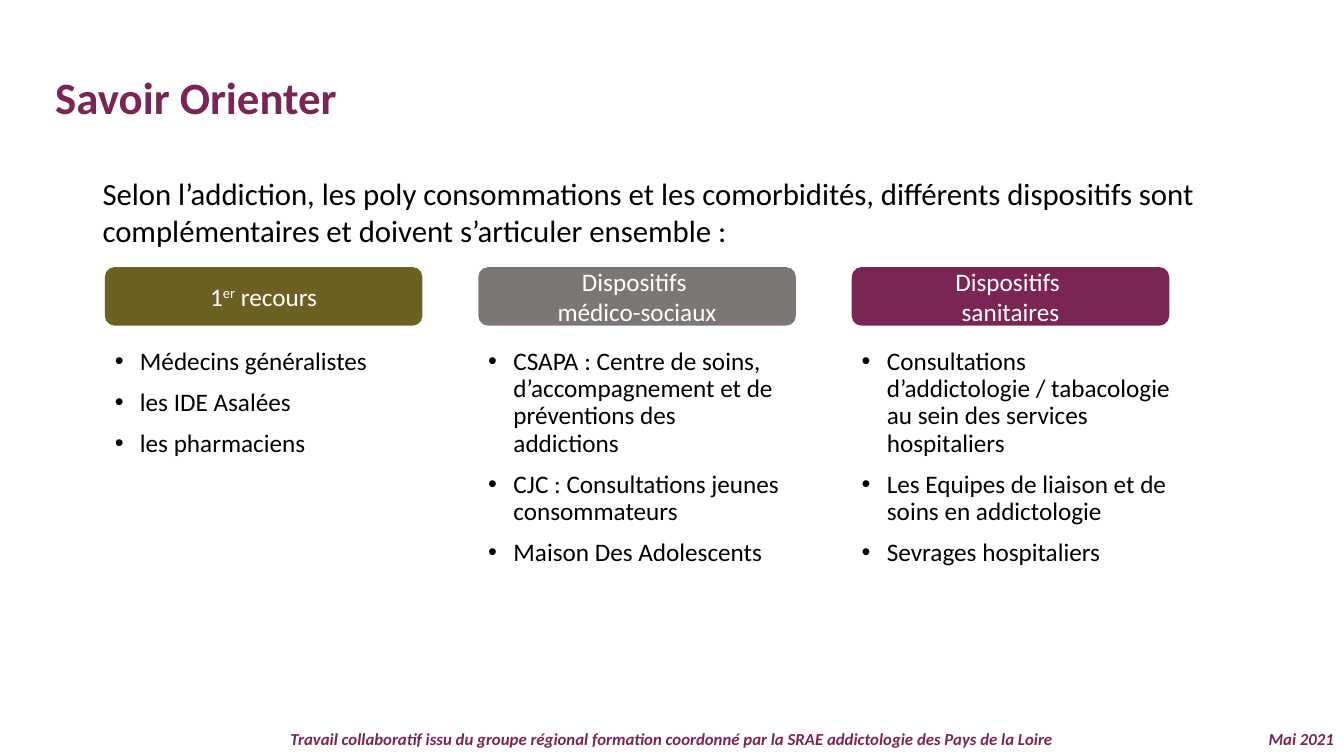
from lxml import etree
from pptx import Presentation
from pptx.dml.color import RGBColor
from pptx.enum import shapes, text
from pptx.oxml import ns
from pptx.util import Pt

PLUM = RGBColor(0x7A, 0x25, 0x53)
OLIVE = RGBColor(0x6B, 0x61, 0x23)
GREY = RGBColor(0x7C, 0x77, 0x75)
BLACK = RGBColor(0, 0, 0)
WHITE = RGBColor(255, 255, 255)

FONT = "Calibri"
COLUMN_LEFT, COLUMN_PITCH = 74.9, 266.75
HEADER_TOP, HEADER_WIDTH, HEADER_HEIGHT = 190.8, 226.8, 41.8
LIST_TOP, BULLET_INDENT = 245.5, 18

# Header lines (each a list of run texts and superscript flags), colour,
# list width, list height, list items
COLUMNS = [
    ([[("1", False), ("er", True), (" recours", False)]], OLIVE, 224.6, 125.3,
     ["Médecins généralistes", "les IDE Asalées", "les pharmaciens"]),
    ([[("Dispositifs ", False)], [("médico-sociaux", False)]], GREY, 224.6, 205.9,
     ["CSAPA : Centre de soins, d’accompagnement et de préventions des addictions",
      "CJC : Consultations jeunes consommateurs",
      "Maison Des Adolescents"]),
    ([[("Dispositifs ", False)], [("sanitaires", False)]], PLUM, 243.4, 174.2,
     ["Consultations d’addictologie / tabacologie au sein des services hospitaliers",
      "Les Equipes de liaison et de soins en addictologie",
      "Sevrages hospitaliers"]),
]


def add_run(paragraph, content, size, color, bold=False, italic=False):
    run = paragraph.add_run()
    run.text = content
    font = run.font
    font.name, font.size, font.bold, font.italic = FONT, Pt(size), bold, italic
    font.color.rgb = color
    return run


def add_text_frame(slide, left, top, width, height):
    box = slide.shapes.add_textbox(Pt(left), Pt(top), Pt(width), Pt(height))
    box.text_frame.word_wrap = True
    return box.text_frame


def add_line(slide, bounds, content, size, color, align=text.PP_ALIGN.LEFT,
             spacing=1.0, bold=False, italic=False):
    """Add a text box that holds one paragraph of uniform style."""
    paragraph = add_text_frame(slide, *bounds).paragraphs[0]
    paragraph.alignment = align
    paragraph.line_spacing = spacing
    add_run(paragraph, content, size, color, bold, italic)


def add_header(slide, left, lines, color):
    shape = slide.shapes.add_shape(
        shapes.MSO_SHAPE.ROUNDED_RECTANGLE,
        Pt(left), Pt(HEADER_TOP), Pt(HEADER_WIDTH), Pt(HEADER_HEIGHT))
    shape.shadow.inherit = False
    shape.fill.solid()
    shape.fill.fore_color.rgb = color
    shape.line.fill.background()
    frame = shape.text_frame
    frame.word_wrap = True
    frame.vertical_anchor = text.MSO_ANCHOR.MIDDLE
    paragraph = frame.paragraphs[0]
    paragraph.alignment = text.PP_ALIGN.CENTER
    for index, line in enumerate(lines):
        if index:
            paragraph.add_line_break()
        for content, superscript in line:
            run = add_run(paragraph, content, 18, WHITE)
            if superscript:
                run.font._element.set("baseline", "30000")


def set_bullet(paragraph):
    properties = paragraph._p.get_or_add_pPr()
    properties.set("marL", str(Pt(BULLET_INDENT)))
    properties.set("indent", str(-Pt(BULLET_INDENT)))
    etree.SubElement(properties, ns.qn("a:buFont"), typeface="Arial")
    etree.SubElement(properties, ns.qn("a:buChar"), char="•")


def add_bullet_list(slide, left, width, height, items):
    frame = add_text_frame(slide, left, LIST_TOP, width, height)
    for index, item in enumerate(items):
        paragraph = frame.add_paragraph() if index else frame.paragraphs[0]
        set_bullet(paragraph)
        paragraph.line_spacing = 0.9
        paragraph.space_before = Pt(10 if index else 0)
        add_run(paragraph, item, 18, BLACK)


def main():
    presentation = Presentation()
    presentation.slide_width, presentation.slide_height = Pt(960), Pt(540)
    slide = presentation.slides.add_slide(presentation.slide_layouts[6])

    add_line(slide, (0, 518.4, 960, 21.6),
             "Travail collaboratif issu du groupe régional formation coordonné "
             "par la SRAE addictologie des Pays de la Loire",
             12, PLUM, text.PP_ALIGN.CENTER, 0.9, bold=True, italic=True)
    add_line(slide, (881.3, 518.4, 78.7, 21.6), "Mai 2021",
             12, PLUM, text.PP_ALIGN.RIGHT, 0.9, bold=True, italic=True)
    add_line(slide, (32.4, 46.1, 927.6, 46.1), "Savoir Orienter", 32, PLUM, bold=True)
    add_line(slide, (66.2, 121, 828, 69.8),
             "Selon l’addiction, les poly consommations et les comorbidités, différents "
             "dispositifs sont complémentaires et doivent s’articuler ensemble :",
             22, BLACK)

    for index, (lines, color, width, height, items) in enumerate(COLUMNS):
        left = COLUMN_LEFT + index * COLUMN_PITCH
        add_header(slide, left, lines, color)
        add_bullet_list(slide, left, width, height, items)

    presentation.save("out.pptx")


if __name__ == "__main__":
    main()
